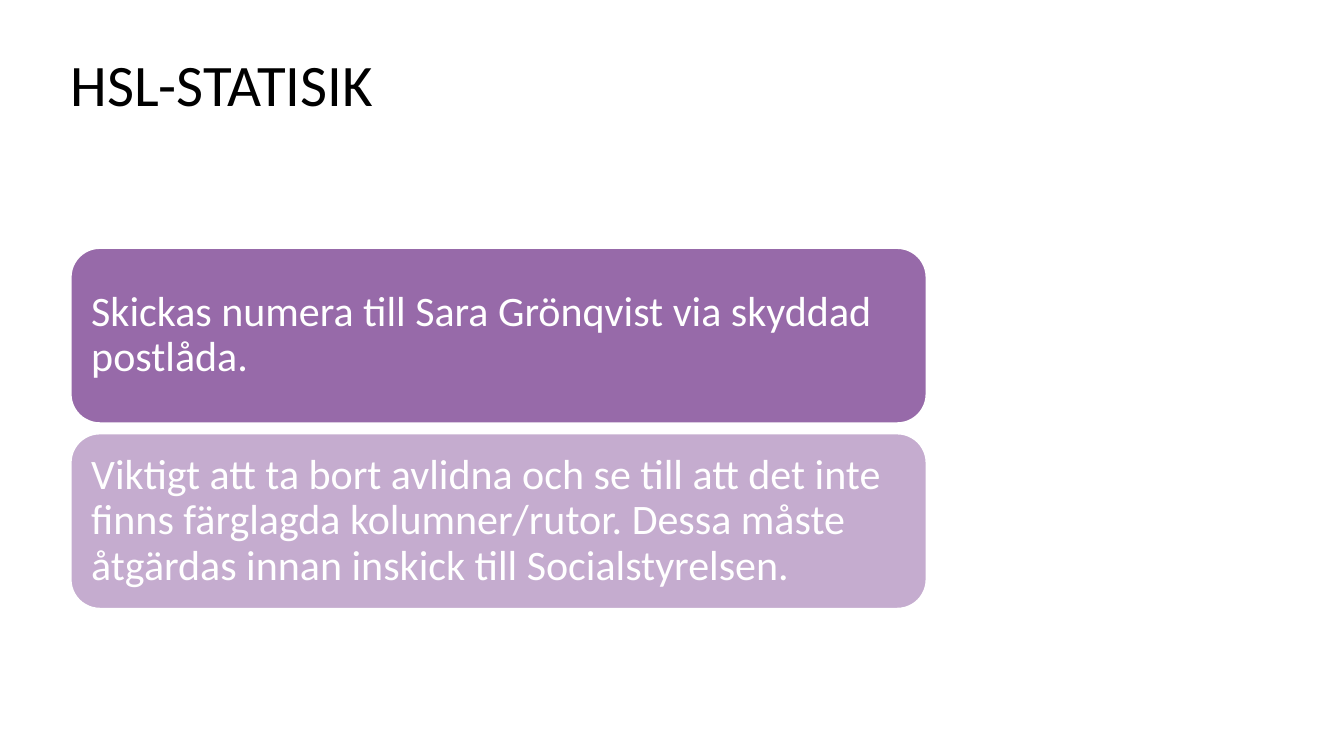
from dataclasses import dataclass

from lxml import etree
from pptx import Presentation
from pptx.dml.color import RGBColor
from pptx.enum.shapes import MSO_SHAPE
from pptx.enum.text import MSO_ANCHOR, MSO_AUTO_SIZE, PP_ALIGN
from pptx.oxml.ns import qn
from pptx.util import Inches, Pt

ROUNDED = MSO_SHAPE.ROUNDED_RECTANGLE
TOP, MIDDLE = MSO_ANCHOR.TOP, MSO_ANCHOR.MIDDLE
LEFT_ALIGN = PP_ALIGN.LEFT
NO_AUTOFIT = MSO_AUTO_SIZE.NONE

TITLE = "HSL-STATISIK"
MESSAGES = [
    ("Skickas numera till Sara Grönqvist via skyddad postlåda.", 90),
    ("Viktigt att ta bort avlidna och se till att det inte finns färglagda "
     "kolumner/rutor. Dessa måste åtgärdas innan inskick till Socialstyrelsen.", 50),
]


@dataclass(frozen=True)
class Theme:
    font: str = "Calibri"
    black: str = "000000"
    white: str = "FFFFFF"
    purple: str = "8C5AA0"
    title_size: int = 42
    body_size: int = 30
    outline: float = 1.5


THEME = Theme()
LEFT, WIDTH = 0.7, 8.49
TITLE_TOP, TITLE_HEIGHT = 0.55, 1.24
CARD_TOP, CARD_HEIGHT, CARD_GAP = 2.46, 1.74, 0.1
CARD_INSET = 0.12


def write(sp, text, *, size, color, anchor, inset=0):
    tf = sp.text_frame
    tf.word_wrap = True
    tf.auto_size = NO_AUTOFIT
    tf.vertical_anchor = anchor
    tf.margin_left = tf.margin_right = Inches(inset)
    tf.margin_top = tf.margin_bottom = Inches(inset)
    p = tf.paragraphs[0]
    p.alignment = LEFT_ALIGN
    p.line_spacing = 0.9
    r = p.add_run()
    r.text = text
    r.font.name = THEME.font
    r.font.size = Pt(size)
    r.font.color.rgb = RGBColor.from_string(color)


def add_card(s, top, text, opacity):
    sp = s.shapes.add_shape(ROUNDED, Inches(LEFT), Inches(top),
                            Inches(WIDTH), Inches(CARD_HEIGHT))
    sp.shadow.inherit = False
    sp.fill.solid()
    sp.fill.fore_color.rgb = RGBColor.from_string(THEME.purple)
    color = sp.element.spPr.find(qn("a:solidFill")).find(qn("a:srgbClr"))
    etree.SubElement(color, qn("a:alpha"), val=str(opacity * 1000))
    sp.line.color.rgb = RGBColor.from_string(THEME.white)
    sp.line.width = Pt(THEME.outline)
    write(sp, text, size=THEME.body_size, color=THEME.white,
          anchor=MIDDLE, inset=CARD_INSET)


def main():
    prs = Presentation()
    prs.slide_width, prs.slide_height = Inches(13.33), Inches(7.5)
    s = prs.slides.add_slide(prs.slide_layouts[5])
    title = s.shapes.title
    title.left, title.top = Inches(LEFT), Inches(TITLE_TOP)
    title.width, title.height = Inches(WIDTH), Inches(TITLE_HEIGHT)
    write(title, TITLE, size=THEME.title_size, color=THEME.black, anchor=TOP)
    for i, (text, opacity) in enumerate(MESSAGES):
        add_card(s, CARD_TOP + i * (CARD_HEIGHT + CARD_GAP), text, opacity)
    prs.save("out.pptx")


if __name__ == "__main__":
    main()
